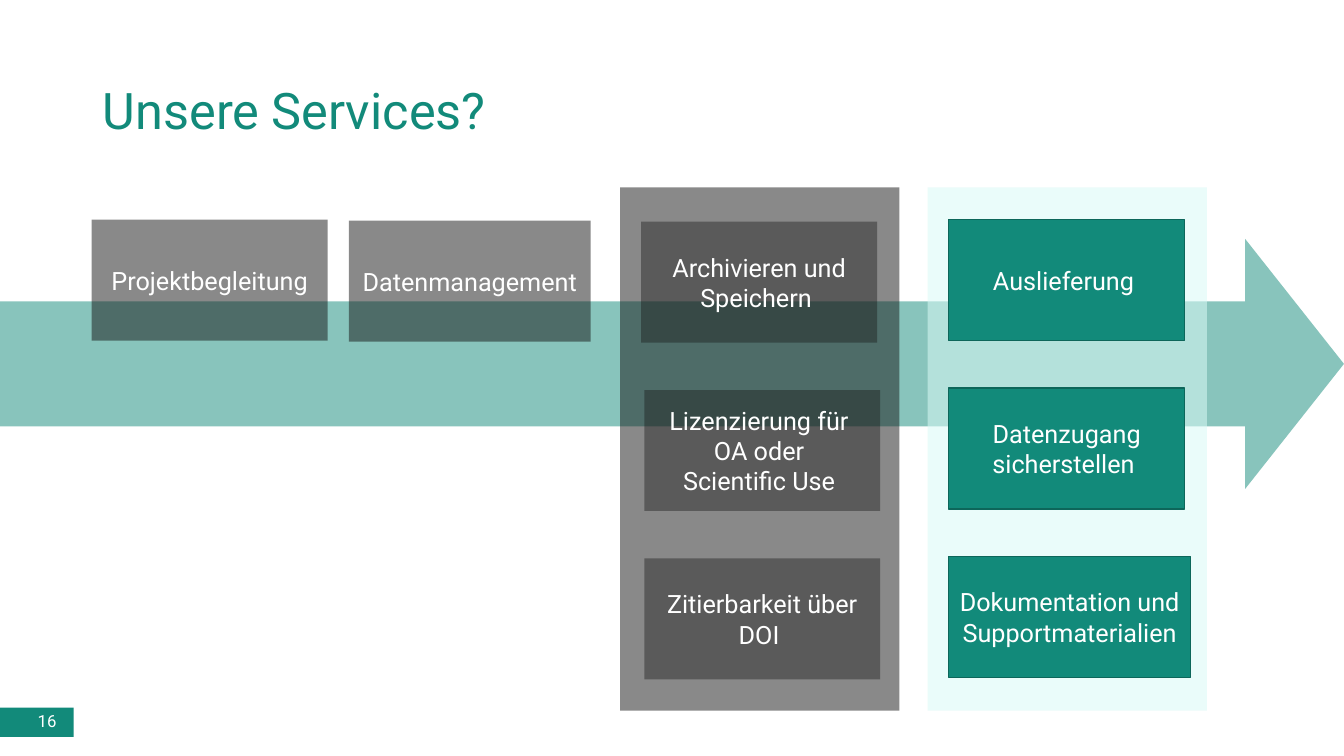
from lxml import etree
from pptx import Presentation
from pptx.dml.color import RGBColor
from pptx.enum.shapes import MSO_SHAPE
from pptx.enum.text import MSO_ANCHOR, PP_ALIGN
from pptx.oxml.ns import qn
from pptx.util import Pt

PX = 9144  # 100 px to the inch
RECTANGLE = MSO_SHAPE.RECTANGLE
RIGHT_ARROW = MSO_SHAPE.RIGHT_ARROW
MIDDLE = MSO_ANCHOR.MIDDLE
LEFT, CENTER, RIGHT = PP_ALIGN.LEFT, PP_ALIGN.CENTER, PP_ALIGN.RIGHT

FONT = "Roboto"
TEAL, DARK_TEAL, MINT = "128A7A", "0D665A", "D9FAF6"
BLACK, WHITE = "151515", "FFFFFF"
BOX_HEIGHT, ROW_STEP = 120, 167
PANEL_TOP, PANEL_WIDTH, PANEL_HEIGHT = 186, 277, 519


def write(shape, text, size, color, alignment):
    frame = shape.text_frame
    frame.word_wrap = True
    frame.vertical_anchor = MIDDLE
    paragraph = frame.paragraphs[0]
    paragraph.text = text
    paragraph.alignment = alignment
    paragraph.font.name = FONT
    paragraph.font.size = Pt(size)
    paragraph.font.color.rgb = RGBColor.from_string(color)
    return paragraph


def add_block(shapes, kind, box, fill, opacity=100, line=None, text=None):
    """Add a filled shape; box is left, top, width, height in px, opacity in percent."""
    shape = shapes.add_shape(kind, *(value * PX for value in box))
    shape.shadow.inherit = False
    shape.fill.solid()
    shape.fill.fore_color.rgb = RGBColor.from_string(fill)
    if opacity < 100:
        color = shape.fill._xPr.find(".//" + qn("a:srgbClr"))
        etree.SubElement(color, qn("a:alpha"), val=str(opacity * 1000))
    if line:
        shape.line.color.rgb = RGBColor.from_string(line)
        shape.line.width = Pt(1)
    else:
        shape.line.fill.background()
    if text:
        write(shape, text, 18, WHITE, CENTER)
    return shape


presentation = Presentation()
presentation.slide_width = 1333 * PX
presentation.slide_height = 750 * PX
slide = presentation.slides.add_slide(presentation.slide_layouts[5])

title = slide.shapes.title
title.left, title.top, title.width, title.height = 92 * PX, 40 * PX, 1045 * PX, 145 * PX
write(title, "Unsere Services?", 36, TEAL, LEFT).line_spacing = 0.9

# Page number
add_block(slide.shapes, RECTANGLE, (0, 702, 73, 29), TEAL)
page_number = slide.shapes.add_textbox(0, 695 * PX, 66 * PX, 40 * PX)
write(page_number, "16", 12, WHITE, RIGHT)

# Process arrow and the first two services
arrow = add_block(slide.shapes, RIGHT_ARROW, (0, 237, 1333, 248), TEAL, 50)
arrow.adjustments[0] = 0.5
arrow.adjustments[1] = 0.395

for left, top, width, text in [
    (91, 218, 234, "Projektbegleitung"),
    (346, 219, 240, "Datenmanagement"),
]:
    add_block(slide.shapes, RECTANGLE, (left, top, width, BOX_HEIGHT), BLACK, 50, text=text)

# Panels: left, fill, opacity, then box top, fill, opacity, line and (left, width, text) rows
panels = [
    (615, BLACK, 50, 220, BLACK, 40, None, [
        (636, 234, "Archivieren und Speichern "),
        (639, 234, "Lizenzierung für \nOA oder \nScientific Use "),
        (639, 234, "Zitierbarkeit über DOI "),
    ]),
    (920, MINT, 55, 218, TEAL, 100, DARK_TEAL, [
        (941, 234, "Auslieferung "),
        (941, 234, "Datenzugang sicherstellen "),
        (941, 240, "Dokumentation und Supportmaterialien"),
    ]),
]
for panel_left, panel_fill, panel_opacity, top, fill, opacity, line, rows in panels:
    group = slide.shapes.add_group_shape()
    panel_box = (panel_left, PANEL_TOP, PANEL_WIDTH, PANEL_HEIGHT)
    add_block(group.shapes, RECTANGLE, panel_box, panel_fill, panel_opacity)
    for row, (left, width, text) in enumerate(rows):
        box = (left, top + row * ROW_STEP, width, BOX_HEIGHT)
        add_block(group.shapes, RECTANGLE, box, fill, opacity, line, text)

presentation.save("out.pptx")
